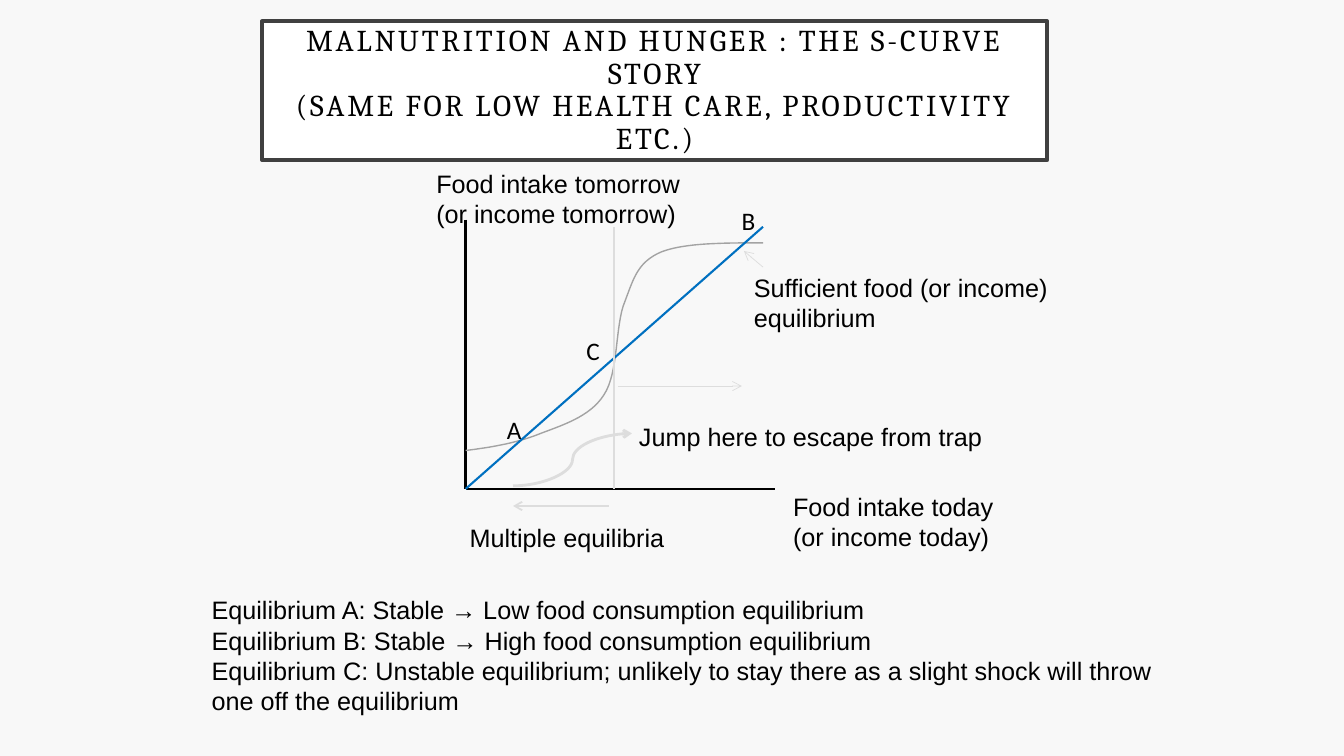
from pptx import Presentation
from pptx.dml.color import RGBColor
from pptx.enum.shapes import MSO_CONNECTOR, MSO_SHAPE
from pptx.enum.text import MSO_ANCHOR, MSO_AUTO_SIZE, PP_ALIGN
from pptx.oxml.ns import qn
from pptx.util import Inches, Pt
from lxml import etree

COLOURS = {"page": "F8F8F8", "panel": "FFFFFF", "frame": "404040", "ink": "000000",
           "diagonal": "0070C0", "s_curve": "A3A3A3", "hint": "DDDDDD"}
COLOURS = {role: RGBColor.from_string(value) for role, value in COLOURS.items()}

deck = Presentation()
deck.slide_width, deck.slide_height = Inches(13.33), Inches(7.5)
slide = deck.slides.add_slide(deck.slide_layouts[6])
slide.background.fill.solid()
slide.background.fill.fore_color.rgb = COLOURS["page"]

# Grid of 160 columns by 90 rows
COLUMN, ROW = deck.slide_width / 160, deck.slide_height / 90


def grid(*lengths):
    """Turn alternating columns and rows into slide lengths."""
    return [round(n * (ROW if i % 2 else COLUMN)) for i, n in enumerate(lengths)]


def draw_line(start, end, colour, weight, arrow=None, kind=MSO_CONNECTOR.STRAIGHT):
    line = slide.shapes.add_connector(kind, *grid(*start, *end))
    line.line.color.rgb = COLOURS[colour]
    line.line.width = Pt(weight)
    if arrow:
        etree.SubElement(line.line._get_or_add_ln(), qn("a:tailEnd"), type=arrow)
    etree.SubElement(line._element.spPr, qn("a:effectLst"))


# Title panel
title = slide.shapes.add_shape(MSO_SHAPE.RECTANGLE, *grid(31.2, 2.52, 93.48, 16.56))
title.shadow.inherit = False
title.fill.solid()
title.fill.fore_color.rgb = COLOURS["panel"]
title.line.color.rgb = COLOURS["frame"]
title.line.width = Pt(2.5)
heading = title.text_frame
heading.word_wrap = True
heading.vertical_anchor = MSO_ANCHOR.MIDDLE
heading.margin_left = heading.margin_right = Inches(0.2)
heading.margin_top = heading.margin_bottom = Inches(0.2)
heading.text = ("MALNUTRITION AND HUNGER : THE S-CURVE STORY\n"
                "(SAME FOR LOW HEALTH CARE, PRODUCTIVITY ETC.)")
for paragraph in heading.paragraphs:
    paragraph.alignment = PP_ALIGN.CENTER
    paragraph.line_spacing = 0.9
    for run in paragraph.runs:
        run.font.name, run.font.size = "Cambria", Pt(21.6)
        run.font.color.rgb = COLOURS["ink"]
        run.font._element.set("spc", "200")

# Axes
origin = (55.44, 58.2)
draw_line((origin[0], 26.16), origin, "ink", 1.75)
draw_line(origin, (92.28, origin[1]), "ink", 1.75)

# S-curve: cubic pieces, each two control points and an end point
curve_start = (55.44, 53.64)
curve_pieces = [
    ((58.32, 53.28), (61.32, 52.8), (64.08, 51.72)),
    ((66.84, 50.64), (70.2, 49.68), (71.88, 47.04)),
    ((73.68, 44.4), (73.2, 38.64), (74.4, 35.88)),
    ((75.48, 33), (75.96, 31.2), (78.72, 30)),
    ((81.48, 28.92), (86.16, 28.92), (90.84, 28.92)),
]
STEPS = 16
curve_points, piece_start = [], curve_start
for control_1, control_2, piece_end in curve_pieces:
    for step in range(1, STEPS + 1):
        t = step / STEPS
        curve_points.append(grid(*(
            (1 - t) ** 3 * a + 3 * (1 - t) ** 2 * t * b + 3 * (1 - t) * t ** 2 * c + t ** 3 * d
            for a, b, c, d in zip(piece_start, control_1, control_2, piece_end))))
    piece_start = piece_end
outline = slide.shapes.build_freeform(*grid(*curve_start))
outline.add_line_segments(curve_points, close=False)
s_curve = outline.convert_to_shape()
s_curve.shadow.inherit = False
s_curve.fill.background()
s_curve.line.color.rgb = COLOURS["s_curve"]
s_curve.line.width = Pt(1)

# Diagonal, threshold and arrows
draw_line(origin, (90.84, 27), "diagonal", 1.5)
draw_line((73.08, origin[1]), (73.08, 27), "hint", 1.5)
draw_line((72.48, 60.24), (61.08, 60.24), "hint", 1.25, "arrow")
draw_line((73.56, 45.96), (88.32, 45.96), "hint", 0.5, "arrow")
draw_line((61.08, 57.84), (75.24, 51.6), "hint", 2, "arrow", MSO_CONNECTOR.CURVE)
draw_line((90.84, 31.8), (88.56, 29.88), "hint", 0.5, "arrow")

# Labels: left, top, width, height, font, lines
labels = [
    (93.24, 57.84, 26.52, 8.52, "Arial", ["Food intake today", "(or income today)"]),
    (50.76, 19.44, 31.68, 8.52, "Arial", ["Food intake tomorrow", "(or income tomorrow)"]),
    (54.72, 61.56, 25.8, 4.8, "Arial", ["Multiple equilibria"]),
    (88.56, 31.8, 38.52, 8.52, "Arial", ["Sufficient food (or income)", "equilibrium"]),
    (74.88, 49.56, 43.68, 4.8, "Arial", ["Jump here to escape from trap"]),
    (59.16, 48.72, 4.2, 4.8, "Calibri", ["A"]),
    (87.12, 23.88, 4.08, 4.8, "Calibri", ["B"]),
    (68.64, 39.36, 4.08, 4.8, "Calibri", ["C"]),
    (24, 70.2, 116.16, 15.72, "Arial", [
        "Equilibrium A: Stable → Low food consumption equilibrium",
        "Equilibrium B: Stable → High food consumption equilibrium",
        "Equilibrium C: Unstable equilibrium; unlikely to stay there as a slight shock will throw",
        "one off the equilibrium"]),
]
for left, top, width, height, font, lines in labels:
    label = slide.shapes.add_textbox(*grid(left, top, width, height)).text_frame
    label.word_wrap = False
    label.auto_size = MSO_AUTO_SIZE.SHAPE_TO_FIT_TEXT
    label.text = "\n".join(lines)
    for paragraph in label.paragraphs:
        for run in paragraph.runs:
            run.font.name, run.font.size = font, Pt(18)
            run.font.color.rgb = COLOURS["ink"]

deck.save("out.pptx")
